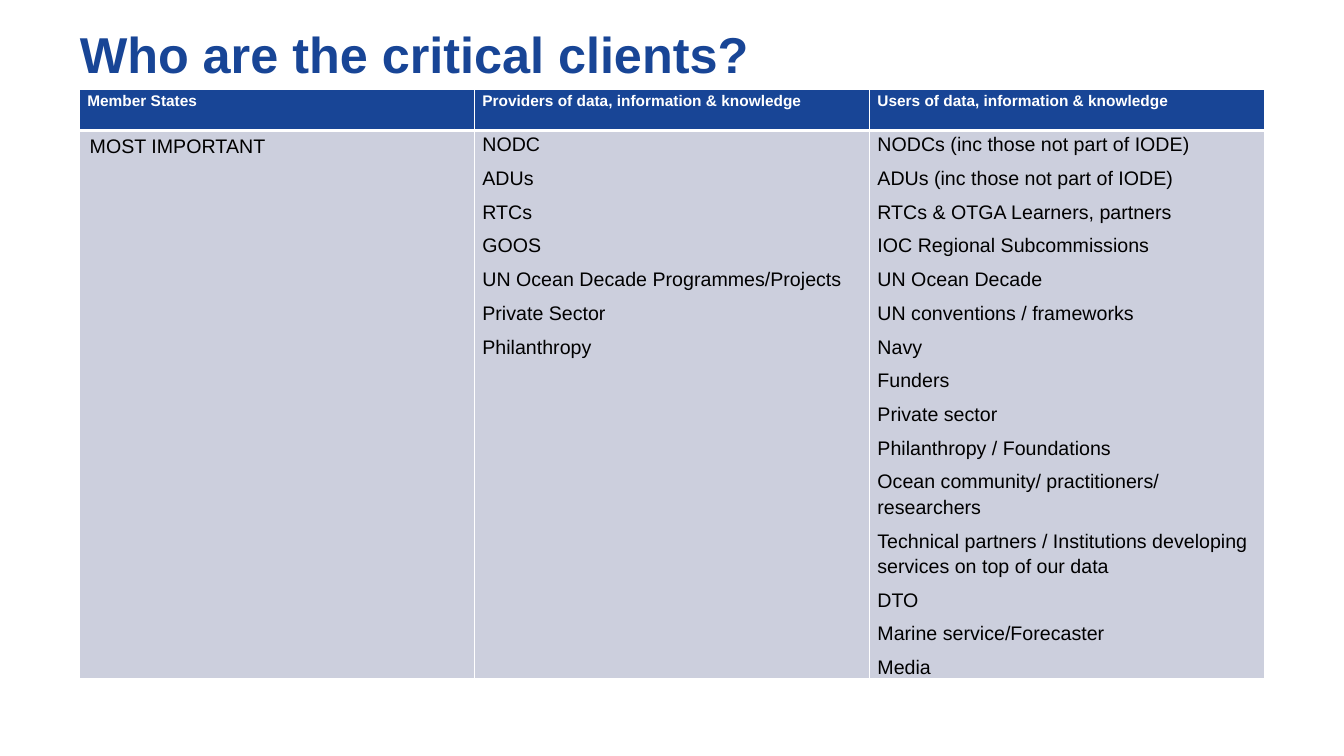
import pptx
import pptx.util
import pptx.dml.color
import pptx.enum.text
import pptx.oxml
import pptx.oxml.ns

Cm = pptx.util.Cm
Pt = pptx.util.Pt

COLORS = {"blue": "184596", "body": "CCCFDD", "white": "FFFFFF", "black": "000000"}
FONT = "Arial"
LEFT, WIDTH = Cm(2.01), Cm(29.87)
HEADERS = [
    "Member States",
    "Providers of data, information & knowledge",
    "Users of data, information & knowledge",
]
CLIENTS = [
    ["MOST IMPORTANT"],
    [
        "NODC",
        "ADUs",
        "RTCs",
        "GOOS",
        "UN Ocean Decade Programmes/Projects",
        "Private Sector",
        "Philanthropy",
    ],
    [
        "NODCs (inc those not part of IODE)",
        "ADUs (inc those not part of IODE)",
        "RTCs & OTGA Learners, partners",
        "IOC Regional Subcommissions",
        "UN Ocean Decade",
        "UN conventions / frameworks",
        "Navy",
        "Funders",
        "Private sector",
        "Philanthropy / Foundations",
        "Ocean community/ practitioners/ researchers",
        "Technical partners / Institutions developing services on top of our data",
        "DTO",
        "Marine service/Forecaster",
        "Media",
    ],
]


def rgb(name):
    return pptx.dml.color.RGBColor.from_string(COLORS[name])


def write(tf, lines, size, color, bold=False, spacing=1.15, after=0):
    for i, line in enumerate(lines):
        p = tf.paragraphs[0] if i == 0 else tf.add_paragraph()
        p.alignment = pptx.enum.text.PP_ALIGN.LEFT
        p.line_spacing = spacing
        p.space_before = Pt(0)
        p.space_after = Pt(after)
        r = p.add_run()
        r.text = line
        r.font.name = FONT
        r.font.size = Pt(size)
        r.font.bold = bold
        r.font.color.rgb = rgb(color)


def set_borders(cell, **widths):
    tc_pr = cell._tc.get_or_add_tcPr()
    for i, side in enumerate("LRTB"):
        ln = pptx.oxml.parse_xml(
            f'<a:ln{side} {pptx.oxml.ns.nsdecls("a")} w="{Pt(widths.get(side, 1))}">'
            f'<a:solidFill><a:srgbClr val="{COLORS["white"]}"/></a:solidFill></a:ln{side}>'
        )
        tc_pr.insert(i, ln)


def format_cell(cell, fill, side_margin=Cm(0.19), top_margin=0):
    cell.fill.solid()
    cell.fill.fore_color.rgb = rgb(fill)
    cell.margin_left = cell.margin_right = side_margin
    cell.margin_top = cell.margin_bottom = top_margin
    cell.vertical_anchor = pptx.enum.text.MSO_ANCHOR.TOP


def add_title(s, text):
    sp = s.shapes.title
    sp.left, sp.top, sp.width, sp.height = LEFT, Cm(0.66), WIDTH, Cm(1.6)
    tf = sp.text_frame
    tf.margin_left = tf.margin_right = tf.margin_top = tf.margin_bottom = 0
    tf.word_wrap = True
    tf.auto_size = pptx.enum.text.MSO_AUTO_SIZE.NONE
    tf.vertical_anchor = pptx.enum.text.MSO_ANCHOR.MIDDLE
    write(tf, [text], 36, "blue", bold=True, spacing=0.85)


def add_client_table(s):
    frame = s.shapes.add_table(2, len(HEADERS), LEFT, Cm(2.26), WIDTH, Cm(14.83))
    table = frame.table
    table.horz_banding = False
    table.rows[0].height = Cm(1.03)
    table.rows[1].height = Cm(13.8)
    for col, (header, clients) in enumerate(zip(HEADERS, CLIENTS)):
        head, body = table.cell(0, col), table.cell(1, col)
        format_cell(head, "blue")
        set_borders(head, B=3)
        write(head.text_frame, [header], 11, "white", bold=True)
        if col == 0:
            format_cell(body, "body", Cm(0.25), Cm(0.13))
        else:
            format_cell(body, "body")
        set_borders(body, T=3)
        write(body.text_frame, clients, 14, "black", spacing=1.15 if col else 1.0, after=6)


def main():
    prs = pptx.Presentation()
    prs.slide_width, prs.slide_height = Cm(33.87), Cm(19.05)
    s = prs.slides.add_slide(prs.slide_layouts[5])
    add_title(s, "Who are the critical clients?")
    add_client_table(s)
    prs.save("out.pptx")


if __name__ == "__main__":
    main()
